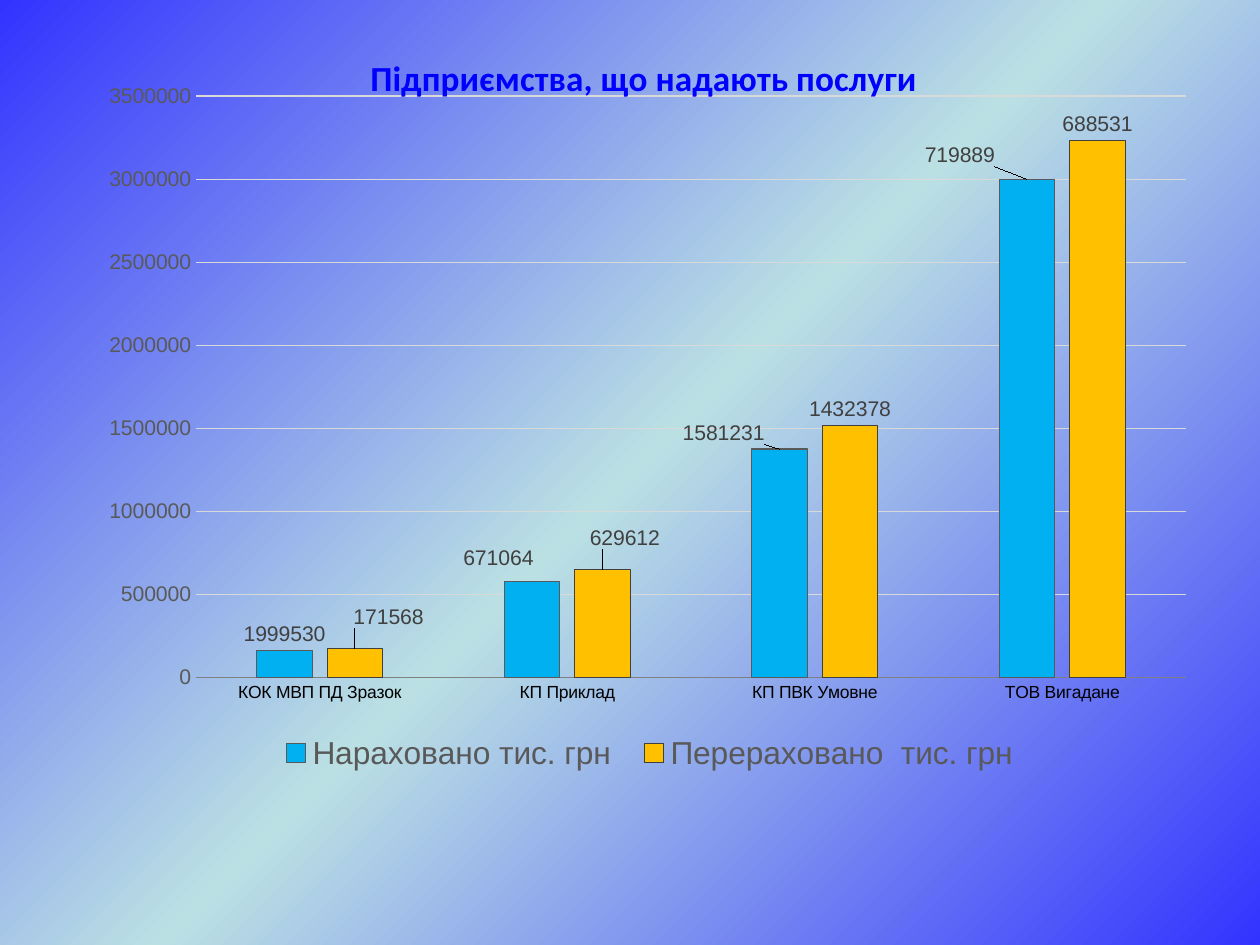
from dataclasses import dataclass

import lxml.etree
import pptx
import pptx.chart.data
import pptx.dml.color
import pptx.enum.chart
import pptx.oxml.ns
import pptx.util

Pt = pptx.util.Pt
qn = pptx.oxml.ns.qn


@dataclass(frozen=True)
class Theme:
    edge: str = "3333FF"
    middle: str = "BBE0E3"
    title: str = "0000FF"
    muted: str = "595959"
    label: str = "404040"
    category: str = "000000"
    axis: str = "808080"
    grid: str = "D9D9D9"
    title_font: str = "Calibri"
    body_font: str = "Arial"
    title_size: float = 20.1
    legend_size: float = 18.1
    value_size: float = 12.1
    category_size: float = 10


THEME = Theme()
C15 = "http://schemas.microsoft.com/office/drawing/2012/chart"
LABEL_EXTENSION = "{CE6537A1-D6FC-4f65-9D91-7224C49458BB}"
TITLE = "Підприємства, що надають послуги"
CATEGORIES = ["КОК МВП ПД Зразок", "КП Приклад", "КП ПВК Умовне", "ТОВ Вигадане"]
SERIES = [
    {
        "name": "Нараховано тис. грн",
        "values": [160000, 575000, 1374000, 3000000],
        "labels": ["1999530", "671064", "1581231", "719889"],
        "offsets": [(0, 0), (-0.03, -0.01), (-0.05, 0), (-0.06, -0.01)],
        "fill": "00B0F0",
        "line": THEME.muted,
    },
    {
        "name": "Перераховано  тис. грн",
        "values": [171568, 651000, 1517000, 3232000],
        "labels": ["171568", "629612", "1432378", "688531"],
        "offsets": [(0.03, -0.02), (0.02, -0.02), (0, 0), (0, 0)],
        "fill": "FFC000",
        "line": THEME.label,
    },
]


def rgb(color):
    return pptx.dml.color.RGBColor.from_string(color)


def set_font(font, size, color, name=THEME.body_font, bold=False):
    font.size = Pt(size)
    font.color.rgb = rgb(color)
    font.name = name
    font.bold = bold


def set_line(line, color, width=0.75):
    line.color.rgb = rgb(color)
    line.width = Pt(width)


def set_layout(parent, index, **settings):
    for old in parent.findall(qn("c:layout")):
        parent.remove(old)
    layout = lxml.etree.Element(qn("c:layout"))
    manual = lxml.etree.SubElement(layout, qn("c:manualLayout"))
    for tag, value in settings.items():
        lxml.etree.SubElement(manual, qn(f"c:{tag}")).set("val", str(value))
    parent.insert(index, layout)


def hide_leader_lines(labels):
    extensions = lxml.etree.SubElement(labels._element, qn("c:extLst"))
    ext = lxml.etree.SubElement(
        extensions, qn("c:ext"), uri=LABEL_EXTENSION, nsmap={"c15": C15}
    )
    lxml.etree.SubElement(ext, f"{{{C15}}}showLeaderLines", val="0")


def set_background(s):
    fill = s.background.fill
    fill.gradient()
    fill.gradient_angle = 315
    stops = s.background._cSld.find(".//" + qn("a:gsLst"))
    for stop in list(stops):
        stops.remove(stop)
    for position, color in [(0, THEME.edge), (50, THEME.middle), (100, THEME.edge)]:
        stop = lxml.etree.SubElement(stops, qn("a:gs"), pos=str(position * 1000))
        lxml.etree.SubElement(stop, qn("a:srgbClr"), val=color)


def add_column_chart(s):
    data = pptx.chart.data.CategoryChartData()
    data.categories = CATEGORIES
    for item in SERIES:
        data.add_series(item["name"], item["values"])
    chart = s.shapes.add_chart(
        pptx.enum.chart.XL_CHART_TYPE.COLUMN_CLUSTERED,
        Pt(48), Pt(13.5), Pt(640), Pt(436.5), data,
    ).chart
    set_font(chart.font, THEME.category_size, THEME.category)
    plot = chart.plots[0]
    plot.gap_width = 219
    plot.overlap = -27
    plot.vary_by_categories = False
    set_layout(
        chart._chartSpace.chart.plotArea, 0, layoutTarget="inner",
        xMode="edge", yMode="edge", x=0.1, y=0.095, w=0.884, h=0.761,
    )
    return chart


def style_title(chart):
    title = chart.chart_title
    p = title.text_frame.paragraphs[0]
    p.text = TITLE
    set_font(p.font, THEME.title_size, THEME.title, THEME.title_font, True)
    set_layout(title._element, 1, xMode="edge", yMode="edge", x=0.25, y=0.03)


def style_legend(chart):
    chart.has_legend = True
    legend = chart.legend
    legend.position = pptx.enum.chart.XL_LEGEND_POSITION.BOTTOM
    legend.include_in_layout = False
    set_font(legend.font, THEME.legend_size, THEME.muted)
    set_layout(
        legend._element, 1,
        xMode="edge", yMode="edge", x=0.16, y=0.92, w=0.69, h=0.07,
    )


def style_axes(chart):
    none = pptx.enum.chart.XL_TICK_MARK.NONE
    for axis in (chart.category_axis, chart.value_axis):
        axis.major_tick_mark = none
        axis.minor_tick_mark = none
    set_font(chart.category_axis.tick_labels.font, THEME.category_size, THEME.category)
    set_line(chart.category_axis.format.line, THEME.axis, 1)

    values = chart.value_axis
    values.minimum_scale = 0
    values.maximum_scale = 3500000
    values.major_unit = 500000
    set_font(values.tick_labels.font, THEME.value_size, THEME.muted)
    values.format.line.fill.background()
    set_line(values.major_gridlines.format.line, THEME.grid)


def style_series(series, item):
    series.format.fill.solid()
    series.format.fill.fore_color.rgb = rgb(item["fill"])
    set_line(series.format.line, item["line"])
    outside = pptx.enum.chart.XL_LABEL_POSITION.OUTSIDE_END
    labels = series.data_labels
    labels.show_value = True
    labels.position = outside
    set_font(labels.font, THEME.value_size, THEME.label)
    for i, (text, (x, y)) in enumerate(zip(item["labels"], item["offsets"])):
        label = series.points[i].data_label
        r = label.text_frame.paragraphs[0].add_run()
        r.text = text
        set_font(r.font, THEME.value_size, THEME.label)
        label.position = outside
        if x or y:
            set_layout(label._get_or_add_dLbl(), 1, x=x, y=y)
    hide_leader_lines(labels)


def main():
    prs = pptx.Presentation()
    prs.slide_width, prs.slide_height = Pt(720), Pt(540)
    s = prs.slides.add_slide(prs.slide_layouts[6])
    set_background(s)
    chart = add_column_chart(s)
    style_title(chart)
    style_legend(chart)
    style_axes(chart)
    for series, item in zip(chart.plots[0].series, SERIES):
        style_series(series, item)
    prs.save("out.pptx")


if __name__ == "__main__":
    main()
